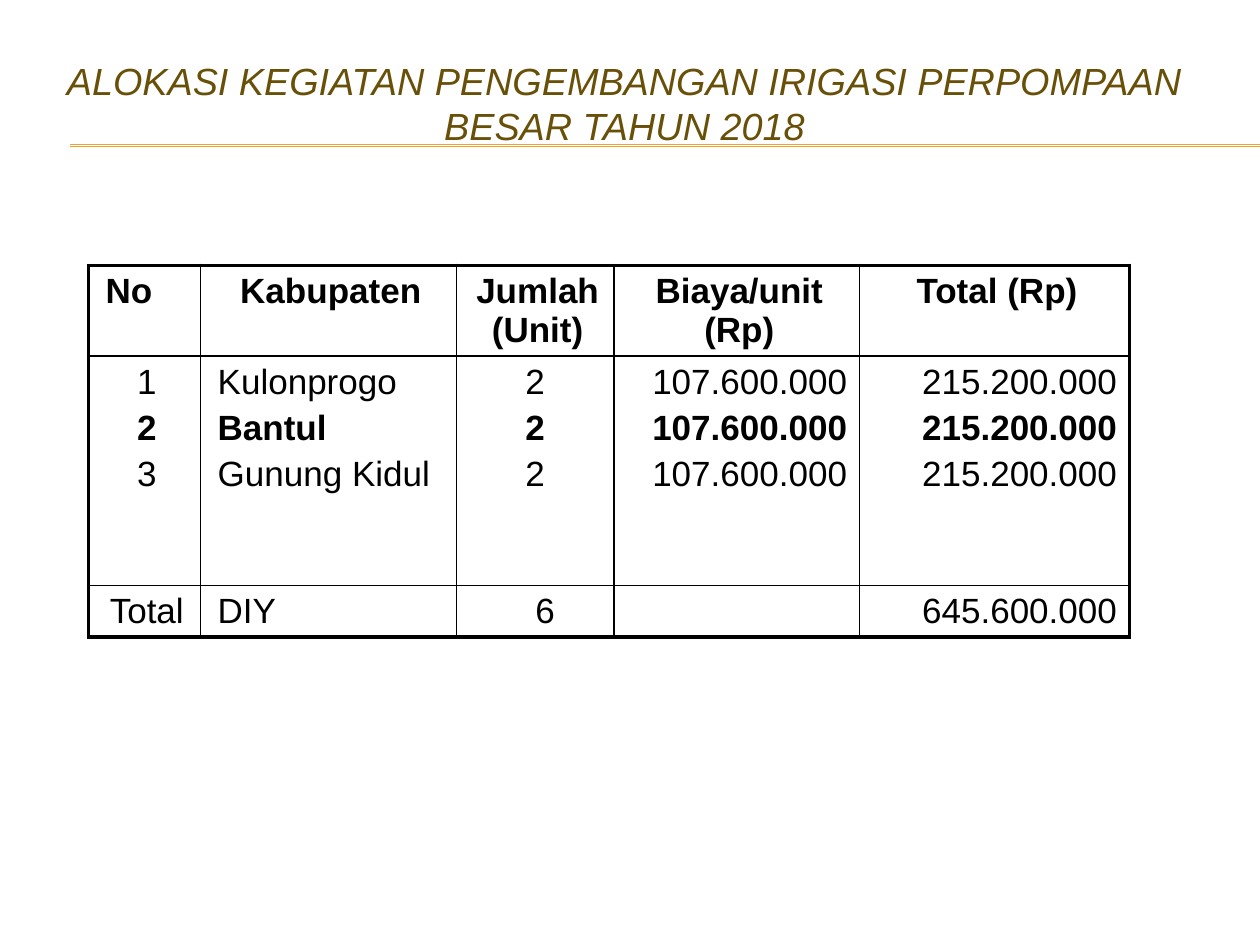
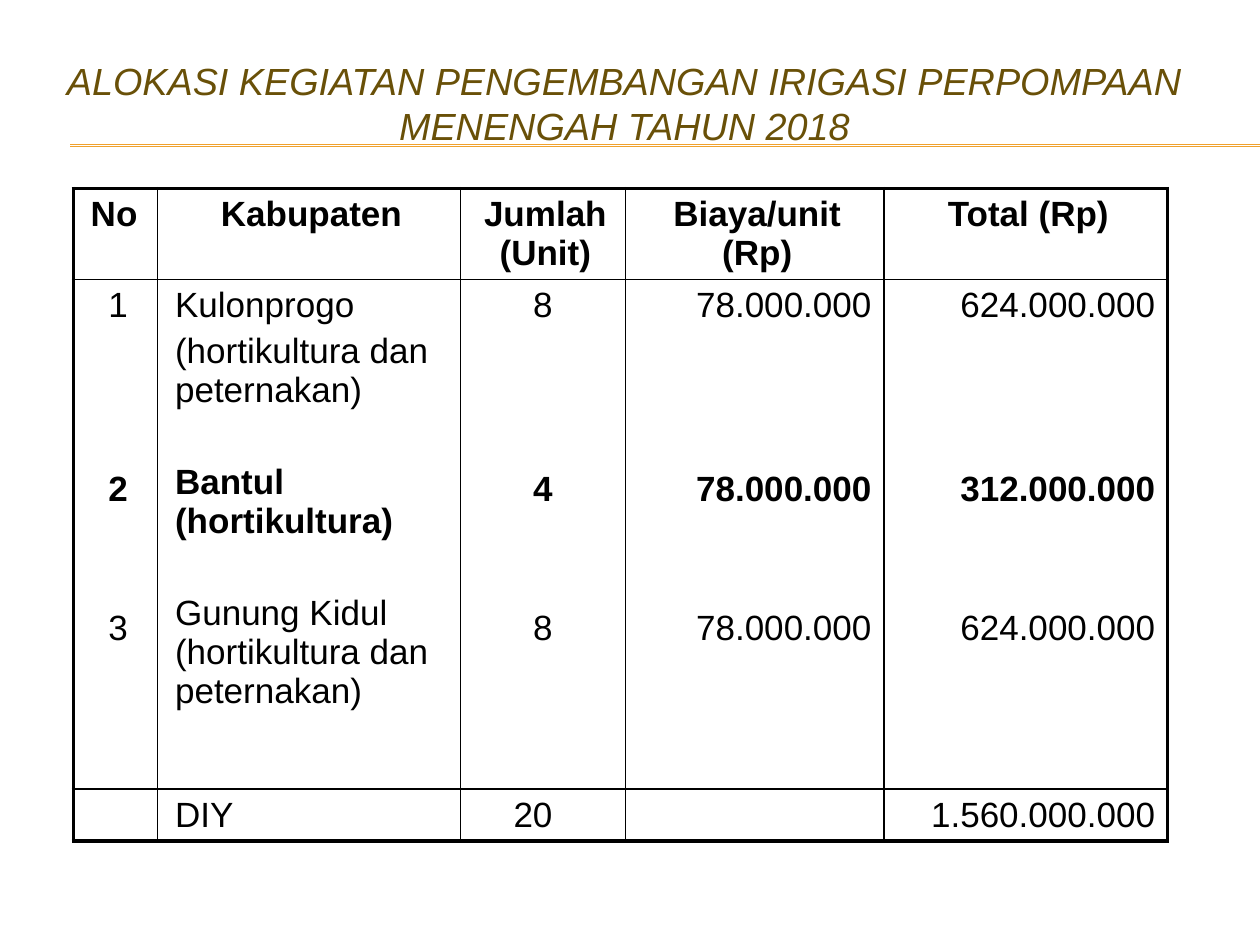
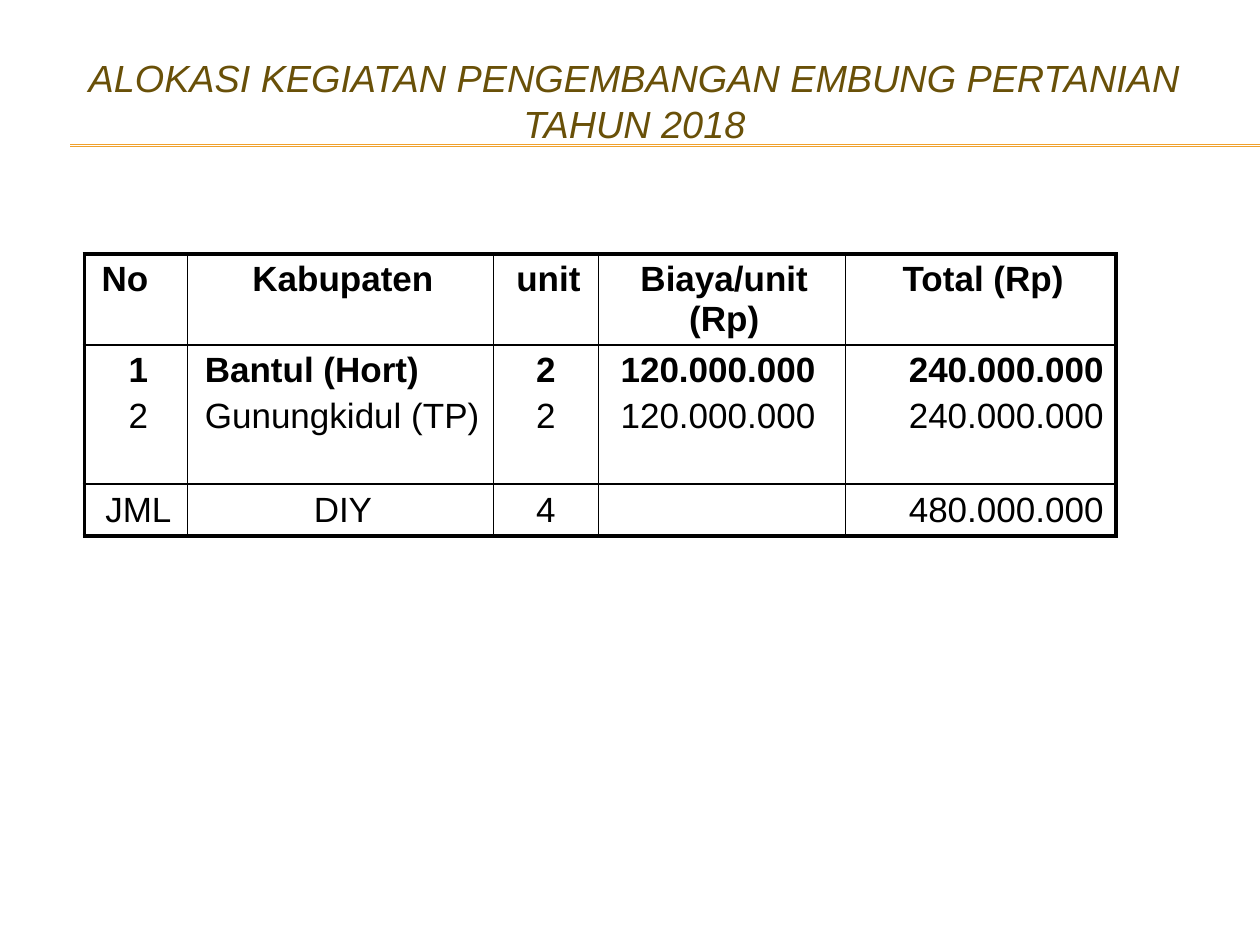
from dataclasses import dataclass

from lxml import etree
from pptx import Presentation
from pptx.dml.color import RGBColor
from pptx.enum.shapes import MSO_CONNECTOR
from pptx.enum.text import MSO_ANCHOR, MSO_AUTO_SIZE, PP_ALIGN
from pptx.oxml.ns import qn
from pptx.util import Cm, Pt

COLORS = {"title": "695008", "rule": "F0A22E", "text": "000000", "border": "000000"}
FONT = "Arial"
TITLE_PT = 21.6
CELL_PT = 20
GAP_PT = 4          # space between the entries of a cell
LINE_PT = 26.4      # one line of cell text with its gap
THIN, THICK = 1, 2.25
MARGIN, INDENT = 0.25, 0.1
ALIGN = {"l": PP_ALIGN.LEFT, "c": PP_ALIGN.CENTER, "r": PP_ALIGN.RIGHT}
NAME, UNITS, COST = 1, 2, 3


@dataclass
class Allocation:
    """One table: header, a body row with several entries per cell, and a total."""
    title: str
    title_box: tuple
    corner: tuple
    widths: tuple
    heights: tuple
    units_label: str
    body: tuple
    total: tuple
    bold: int
    name_bold: int
    gaps: tuple = ()        # skipped lines above each entry
    name_gaps: tuple = ()
    body_align: str = "clcrr"
    total_align: str = "clcrr"
    units_shift: float = 0  # the total of units sits off centre
    cost_shift: float = 0


ALLOCATIONS = [
    Allocation(
        title="ALOKASI KEGIATAN PENGEMBANGAN IRIGASI PERPOMPAAN BESAR TAHUN 2018",
        title_box=(0.89, 1.19, 23.4, 1.78),
        corner=(1.78, 5.35),
        widths=(2.26, 5.16, 3.18, 4.95, 5.44),
        heights=(1.83, 4.62, 1.04),
        units_label="Jumlah (Unit)",
        body=(
            ("1", "2", "3"),
            ("Kulonprogo", "Bantul", "Gunung Kidul"),
            ("2", "2", "2"),
            ("107.600.000",) * 3,
            ("215.200.000",) * 3,
        ),
        total=("Total", "DIY", "6", "", "645.600.000"),
        bold=1,
        name_bold=1,
        units_shift=0.4,
    ),
    Allocation(
        title="ALOKASI KEGIATAN PENGEMBANGAN IRIGASI PERPOMPAAN MENENGAH TAHUN 2018",
        title_box=(0.89, 1.19, 23.4, 1.78),
        corner=(1.48, 3.8),
        widths=(1.7, 6.1, 3.33, 5.21, 5.72),
        heights=(1.83, 10.28, 1.04),
        units_label="Jumlah (Unit)",
        body=(
            ("1", "2", "3"),
            ("Kulonprogo", "(hortikultura dan peternakan)", "Bantul (hortikultura)",
             "Gunung Kidul (hortikultura dan peternakan)"),
            ("8", "4", "8"),
            ("78.000.000",) * 3,
            ("624.000.000", "312.000.000", "624.000.000"),
        ),
        total=("", "DIY", "20", "", "1.560.000.000"),
        bold=1,
        name_bold=2,
        gaps=(0, 3, 2),
        name_gaps=(0, 0, 1, 1),
        units_shift=-0.4,
    ),
    Allocation(
        title="ALOKASI KEGIATAN PENGEMBANGAN EMBUNG PERTANIAN TAHUN 2018",
        title_box=(1.09, 1.07, 23.4, 1.9),
        corner=(1.7, 5.12),
        widths=(2.08, 6.17, 2.11, 4.98, 5.46),
        heights=(1.83, 2.81, 1.04),
        units_label="unit",
        body=(
            ("1", "2"),
            ("Bantul (Hort)", "Gunungkidul (TP)"),
            ("2", "2"),
            ("120.000.000",) * 2,
            ("240.000.000",) * 2,
        ),
        total=("JML", "DIY", "4", "", "480.000.000"),
        bold=0,
        name_bold=0,
        body_align="clclr",
        total_align="cccrr",
        cost_shift=0.2,
    ),
]


def style_run(r, size, color, bold=False, italic=False):
    f = r.font
    f.name, f.size, f.bold, f.italic = FONT, Pt(size), bold, italic
    f.color.rgb = RGBColor.from_string(COLORS[color])


def add_title(s, text, box):
    sp = s.shapes.title
    sp.left, sp.top, sp.width, sp.height = map(Cm, box)
    tf = sp.text_frame
    tf.text = text
    tf.word_wrap = True
    tf.auto_size = MSO_AUTO_SIZE.NONE
    tf.vertical_anchor = MSO_ANCHOR.MIDDLE
    p = tf.paragraphs[0]
    p.alignment = PP_ALIGN.CENTER
    style_run(p.runs[0], TITLE_PT, "title", italic=True)


def add_title_rule(s):
    """Draw the double line under the title, out to the right edge."""
    for y in (2.92, 2.95):
        line = s.shapes.add_connector(MSO_CONNECTOR.STRAIGHT, Cm(1.42), Cm(y), Cm(25.4), Cm(y))
        line.line.color.rgb = RGBColor.from_string(COLORS["rule"])
        line.line.width = Pt(0.75)
        etree.SubElement(line._element.spPr, qn("a:effectLst"))


def set_borders(cell, widths):
    """Set the left, right, top and bottom lines, before the cell's fill."""
    tc_pr = cell._tc.get_or_add_tcPr()
    for i, (side, width) in enumerate(zip("LRTB", widths)):
        ln = etree.Element(qn(f"a:ln{side}"), w=str(Pt(width)))
        fill = etree.SubElement(ln, qn("a:solidFill"))
        etree.SubElement(fill, qn("a:srgbClr"), val=COLORS["border"])
        tc_pr.insert(i, ln)


def fill_cell(cell, entries, align, bold=(), gaps=(), shift=0.0):
    """Write one paragraph per entry; a positive shift pushes the text right."""
    cell.margin_left = Cm(MARGIN + max(shift, 0))
    cell.margin_right = Cm(MARGIN + max(-shift, 0))
    tf = cell.text_frame
    tf.text = "\n".join(entries)
    for i, p in enumerate(tf.paragraphs):
        p.alignment = ALIGN[align]
        if i:
            p.space_before = Pt(GAP_PT + LINE_PT * (gaps[i] if gaps else 0))
        for r in p.runs:
            style_run(r, CELL_PT, "text", bold=i in bold)


def add_allocation_table(s, a):
    left, top = a.corner
    n_rows, n_cols = len(a.heights), len(a.widths)
    table = s.shapes.add_table(n_rows, n_cols, Cm(left), Cm(top),
                               Cm(sum(a.widths)), Cm(sum(a.heights))).table
    table.first_row = table.horz_banding = False
    for col, width in zip(table.columns, a.widths):
        col.width = Cm(width)
    for row, height in zip(table.rows, a.heights):
        row.height = Cm(height)

    header = ("No", "Kabupaten", a.units_label, "Biaya/unit (Rp)", "Total (Rp)")
    for c in range(n_cols):
        is_name = c == NAME
        indent = INDENT if c <= NAME else 0
        fill_cell(table.cell(0, c), [header[c]], "lcccc"[c], bold=(0,), shift=INDENT)
        fill_cell(table.cell(1, c), a.body[c], a.body_align[c],
                  bold=(a.name_bold if is_name else a.bold,),
                  gaps=a.name_gaps if is_name else a.gaps,
                  shift=a.cost_shift if c == COST else indent)
        fill_cell(table.cell(2, c), [a.total[c]], a.total_align[c],
                  shift=a.units_shift if c == UNITS else indent)
        for r in range(n_rows):
            cell = table.cell(r, c)
            cell.fill.background()
            outer = (c == 0, c == n_cols - 1, r == 0, r == n_rows - 1)
            set_borders(cell, [THICK if edge else THIN for edge in outer])


def main():
    prs = Presentation()
    prs.slide_width, prs.slide_height = Cm(25.4), Cm(19.05)
    title_only = prs.slide_layouts[5]
    for a in ALLOCATIONS:
        s = prs.slides.add_slide(title_only)
        add_title_rule(s)
        add_allocation_table(s, a)
        add_title(s, a.title, a.title_box)
    prs.save("out.pptx")


if __name__ == "__main__":
    main()
